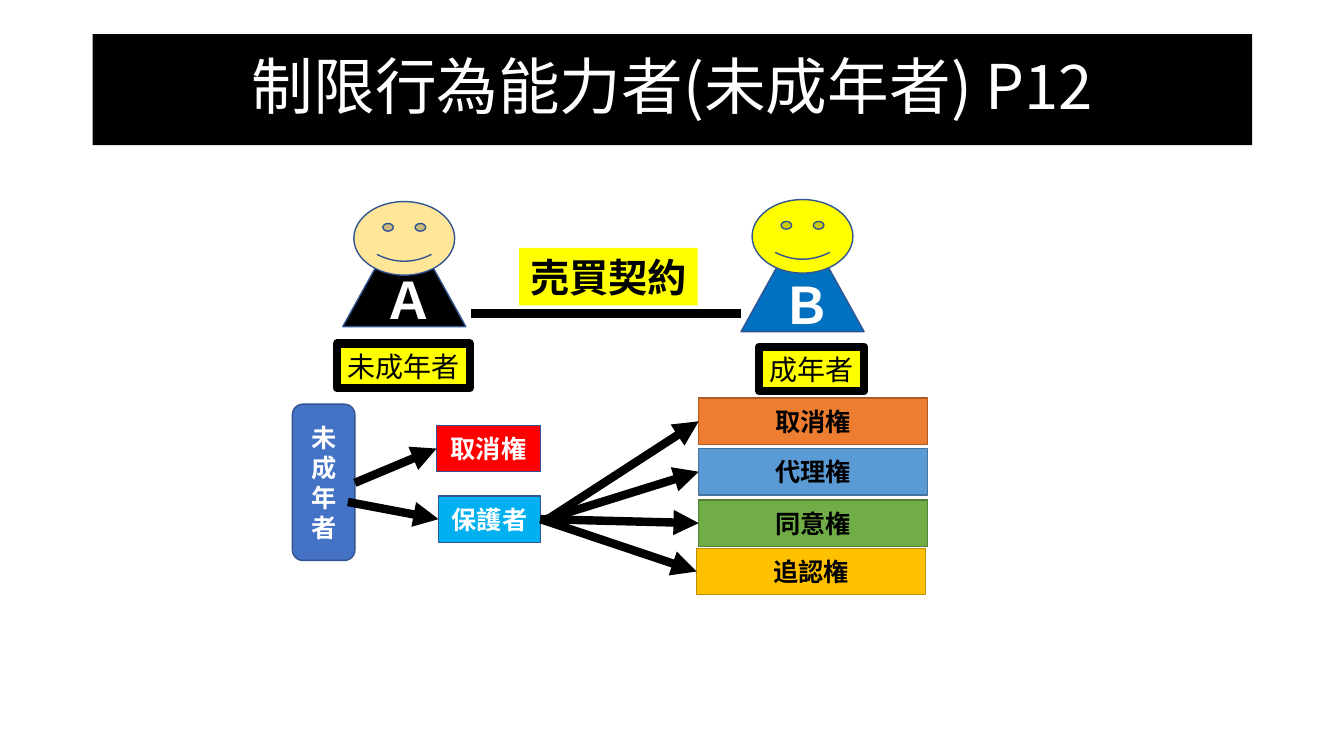
from lxml.etree import SubElement
from pptx import Presentation
from pptx.dml.color import RGBColor
from pptx.enum.shapes import MSO_CONNECTOR as Connector, MSO_SHAPE as Shape
from pptx.enum.text import MSO_ANCHOR as Anchor, PP_ALIGN as Align
from pptx.oxml.ns import qn
from pptx.util import Inches, Pt

FONT = "Noto Sans CJK JP"
COLORS = {
    "black": "000000",
    "white": "FFFFFF",
    "yellow": "FFFF00",
    "skin": "FFE699",
    "red": "FF0000",
    "sky": "00B0F0",
    "blue": "0070C0",
    "indigo": "4472C4",
    "outline": "325491",
    "orange": "ED7D31",
    "orange_edge": "AF5C24",
    "steel": "5B9BD5",
    "steel_edge": "43739E",
    "green": "70AD47",
    "green_edge": "538035",
    "gold": "FFC000",
    "gold_edge": "BD8E00",
}


def color(name):
    return RGBColor.from_string(COLORS[name])


def add_box(slide, kind, bounds, fill, outline="outline", width=1):
    shape = slide.shapes.add_shape(kind, *map(Inches, bounds))
    shape.shadow.inherit = False
    shape.fill.solid()
    shape.fill.fore_color.rgb = color(fill)
    if outline:
        shape.line.color.rgb = color(outline)
        shape.line.width = Pt(width)
    else:
        shape.line.fill.background()
    return shape


def write(shape, text, size=18, ink="white", bold=True, name=FONT, wrap=True):
    frame = shape.text_frame
    frame.word_wrap = wrap
    frame.vertical_anchor = Anchor.MIDDLE
    paragraph = frame.paragraphs[0]
    paragraph.text = text
    paragraph.alignment = Align.CENTER
    font = paragraph.font
    font.name = name
    font.size = Pt(size)
    font.bold = bold
    font.color.rgb = color(ink)
    run_properties = paragraph.runs[0].font
    run_properties.name = name
    latin = run_properties._element.find(qn("a:latin"))
    east_asian = SubElement(run_properties._element, qn("a:ea"))
    east_asian.set("typeface", latin.get("typeface"))


def add_line(slide, start, end, arrow=True):
    points = map(Inches, (*start, *end))
    line = slide.shapes.add_connector(Connector.STRAIGHT, *points)
    line.line.color.rgb = color("black")
    line.line.width = Pt(6)
    properties = line._element.spPr
    if arrow:
        SubElement(line.line._get_or_add_ln(), qn("a:tailEnd"), type="triangle")
    SubElement(properties, qn("a:effectLst"))


def add_title(slide):
    title = add_box(slide, Shape.RECTANGLE, (0.92, 0.34, 11.5, 1.1), "black", None)
    write(title, "制限行為能力者(未成年者) P12", 44, bold=False)
    title.text_frame.paragraphs[0].line_spacing = 0.9


def add_person(slide, left, top, letter, body_fill, face_fill, face_top, name):
    body = add_box(slide, Shape.ISOSCELES_TRIANGLE, (left, top, 1.22, 1.1), body_fill)
    write(body, letter, 36, name=name)
    add_box(slide, Shape.SMILEY_FACE, (left + 0.11, face_top, 1, 0.73), face_fill)


def add_label(slide, bounds, text, size=20, bold=False, outline="black"):
    label = add_box(slide, Shape.RECTANGLE, bounds, "yellow", outline, 6)
    write(label, text, size, "black", bold, wrap=False)


def add_rights(slide):
    rights = [
        ("取消権", "orange", 6.93, 3.95, (5.42, 5.16)),
        ("代理権", "steel", 6.93, 4.45, (5.39, 5.16)),
        ("同意権", "green", 6.93, 4.96, (5.36, 5.15)),
        ("追認権", "gold", 6.91, 5.44, (5.36, 5.15)),
    ]
    for text, fill, left, top, start in rights:
        bounds = (left, top, 2.27, 0.46)
        box = add_box(slide, Shape.RECTANGLE, bounds, fill, f"{fill}_edge")
        write(box, text, ink="black")
        add_line(slide, start, (left, top + 0.23))


def add_minor_tree(slide):
    minor = add_box(slide, Shape.ROUNDED_RECTANGLE, (2.9, 4.01, 0.62, 1.55), "indigo")
    write(minor, "未成年者")
    branches = [
        ("取消権", "red", (4.33, 4.22, 1.03, 0.46), (3.52, 4.79)),
        ("保護者", "sky", (4.35, 4.92, 1.01, 0.46), (3.45, 4.98)),
    ]
    for text, fill, bounds, start in branches:
        write(add_box(slide, Shape.RECTANGLE, bounds, fill), text)
        add_line(slide, start, (bounds[0], bounds[1] + 0.23))


def main():
    presentation = Presentation()
    presentation.slide_width = Inches(13.33)
    presentation.slide_height = Inches(7.5)
    slide = presentation.slides.add_slide(presentation.slide_layouts[6])
    add_title(slide)
    add_person(slide, 3.4, 2.14, "Ａ", "black", "skin", 2, "Roboto")
    add_person(slide, 7.35, 2.19, "Ｂ", "blue", "yellow", 1.98, FONT)
    add_label(slide, (3.34, 3.41, 1.32, 0.44), "未成年者")
    add_label(slide, (7.53, 3.44, 1.04, 0.44), "成年者")
    add_label(slide, (5.15, 2.46, 1.77, 0.57), "売買契約", 28, True, None)
    add_line(slide, (4.67, 3.11), (7.35, 3.11), arrow=False)
    add_minor_tree(slide)
    add_rights(slide)
    presentation.save("out.pptx")


if __name__ == "__main__":
    main()
